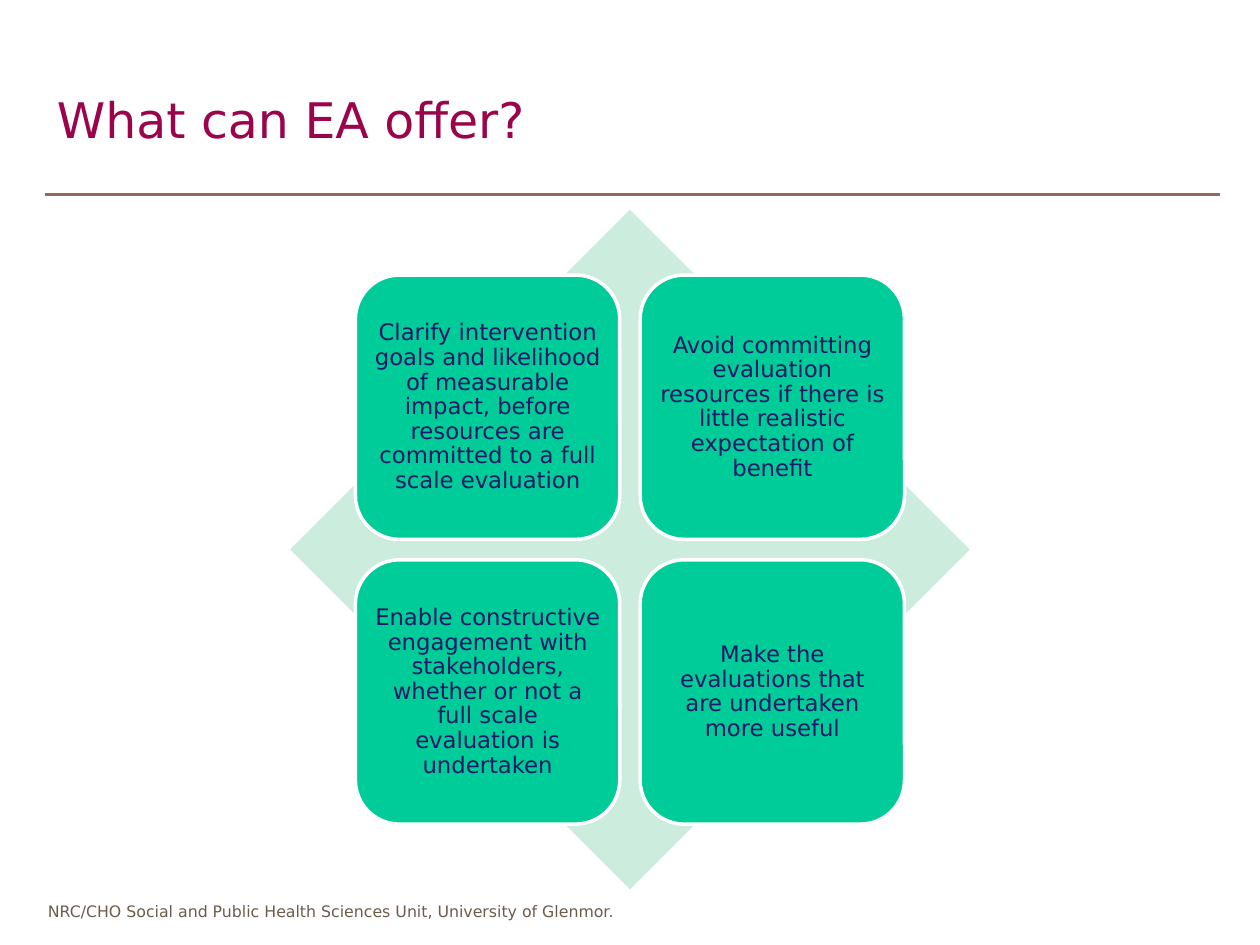
"""Build the slide on what EA can offer: four benefits over a diamond."""
from dataclasses import dataclass
from itertools import product

from lxml.etree import SubElement
from pptx import Presentation
from pptx.dml.color import RGBColor
from pptx.enum.shapes import MSO_CONNECTOR as Connector, MSO_SHAPE as Preset
from pptx.enum.text import MSO_ANCHOR as Anchor, PP_ALIGN as Align
from pptx.oxml.ns import qn
from pptx.util import Cm, Pt


@dataclass(frozen=True)
class Theme:
    font: str = "DejaVu Sans"
    title: RGBColor = RGBColor(0x9A, 0x04, 0x4B)
    rule: RGBColor = RGBColor(0x91, 0x69, 0x5F)
    footer: RGBColor = RGBColor(0x6C, 0x5C, 0x4C)
    diamond: RGBColor = RGBColor(0xCC, 0xEC, 0xDE)
    tile: RGBColor = RGBColor(0x00, 0xCC, 0x99)
    outline: RGBColor = RGBColor(0xFF, 0xFF, 0xFF)
    tile_text: RGBColor = RGBColor(0x19, 0x19, 0x66)
    title_size: float = 28
    tile_size: float = 13
    footer_size: float = 9
    rule_width: float = 1.75
    outline_width: float = 2


@dataclass(frozen=True)
class Area:
    left: float
    top: float
    width: float
    height: float

    def lengths(self) -> tuple:
        return Cm(self.left), Cm(self.top), Cm(self.width), Cm(self.height)


@dataclass(frozen=True)
class Label:
    text: str
    size: float
    color: RGBColor
    align: Align = Align.LEFT
    spacing: float = 1.0


THEME = Theme()
CENTRE_X, CENTRE_Y = 12.7, 11.08
DIAMOND_SIDE = 13.7
TILE_SIDE, TILE_GAP = 5.33, 0.41
TILE_INSET = Cm(0.13)
BENEFITS = (
    "Clarify intervention goals and likelihood of measurable impact, "
    "before resources are committed to a full scale evaluation",
    "Avoid committing evaluation resources if there is little realistic "
    "expectation of benefit",
    "Enable constructive engagement with stakeholders, whether or not "
    "a full scale evaluation is undertaken",
    "Make the evaluations that are undertaken more useful",
)


def set_all(target, values: dict) -> None:
    for name, value in values.items():
        setattr(target, name, value)


def write(shape, label: Label, frame_format: dict) -> None:
    frame = shape.text_frame
    set_all(frame, frame_format)
    para = frame.paragraphs[0]
    set_all(para, {"alignment": label.align, "line_spacing": label.spacing})
    span = para.add_run()
    span.text = label.text
    set_all(span.font, {"name": THEME.font, "size": Pt(label.size)})
    span.font.color.rgb = label.color


def add_text(page, area: Area, label: Label, frame_format: dict) -> None:
    write(page.shapes.add_textbox(*area.lengths()), label, frame_format)


def add_filled(page, preset: Preset, area: Area, color: RGBColor):
    shape = page.shapes.add_shape(preset, *area.lengths())
    shape.shadow.inherit = False
    shape.fill.solid()
    shape.fill.fore_color.rgb = color
    shape.line.fill.background()
    return shape


def add_rule(page, left: float, right: float, top: float) -> None:
    rule = page.shapes.add_connector(
        Connector.STRAIGHT, Cm(left), Cm(top), Cm(right), Cm(top))
    rule.line.color.rgb = THEME.rule
    rule.line.width = Pt(THEME.rule_width)
    SubElement(rule.element.spPr, qn("a:effectLst"))


def add_tile(page, row: int, column: int, text: str) -> None:
    pitch = TILE_SIDE + TILE_GAP
    offset = TILE_SIDE + TILE_GAP / 2
    area = Area(CENTRE_X - offset + column * pitch,
                CENTRE_Y - offset + row * pitch, TILE_SIDE, TILE_SIDE)
    tile = add_filled(page, Preset.ROUNDED_RECTANGLE, area, THEME.tile)
    tile.line.color.rgb = THEME.outline
    tile.line.width = Pt(THEME.outline_width)
    label = Label(text, THEME.tile_size, THEME.tile_text, Align.CENTER, 0.9)
    margins = dict.fromkeys(
        ("margin_left", "margin_top", "margin_right", "margin_bottom"), TILE_INSET)
    write(tile, label,
          {"word_wrap": True, "vertical_anchor": Anchor.MIDDLE, **margins})


def main() -> None:
    deck = Presentation()
    set_all(deck, {"slide_width": Cm(25.4), "slide_height": Cm(19.05)})
    page = deck.slides.add_slide(deck.slide_layouts[6])

    add_text(page, Area(0.63, 18.06, 12.07, 0.64),
             Label("NRC/CHO Social and Public Health Sciences Unit, "
                   "University of Glenmor.",
                   THEME.footer_size, THEME.footer, Align.CENTER),
             {"word_wrap": False})
    add_rule(page, 0.9, 24.6, 3.93)
    add_text(page, Area(0.9, 1.27, 23.7, 2.26),
             Label("What can EA offer?", THEME.title_size, THEME.title),
             {"word_wrap": True, "vertical_anchor": Anchor.MIDDLE})

    half = DIAMOND_SIDE / 2
    add_filled(page, Preset.DIAMOND,
               Area(CENTRE_X - half, CENTRE_Y - half, DIAMOND_SIDE, DIAMOND_SIDE),
               THEME.diamond)
    for (row, column), text in zip(product(range(2), repeat=2), BENEFITS):
        add_tile(page, row, column, text)

    deck.save("out.pptx")


if __name__ == "__main__":
    main()
